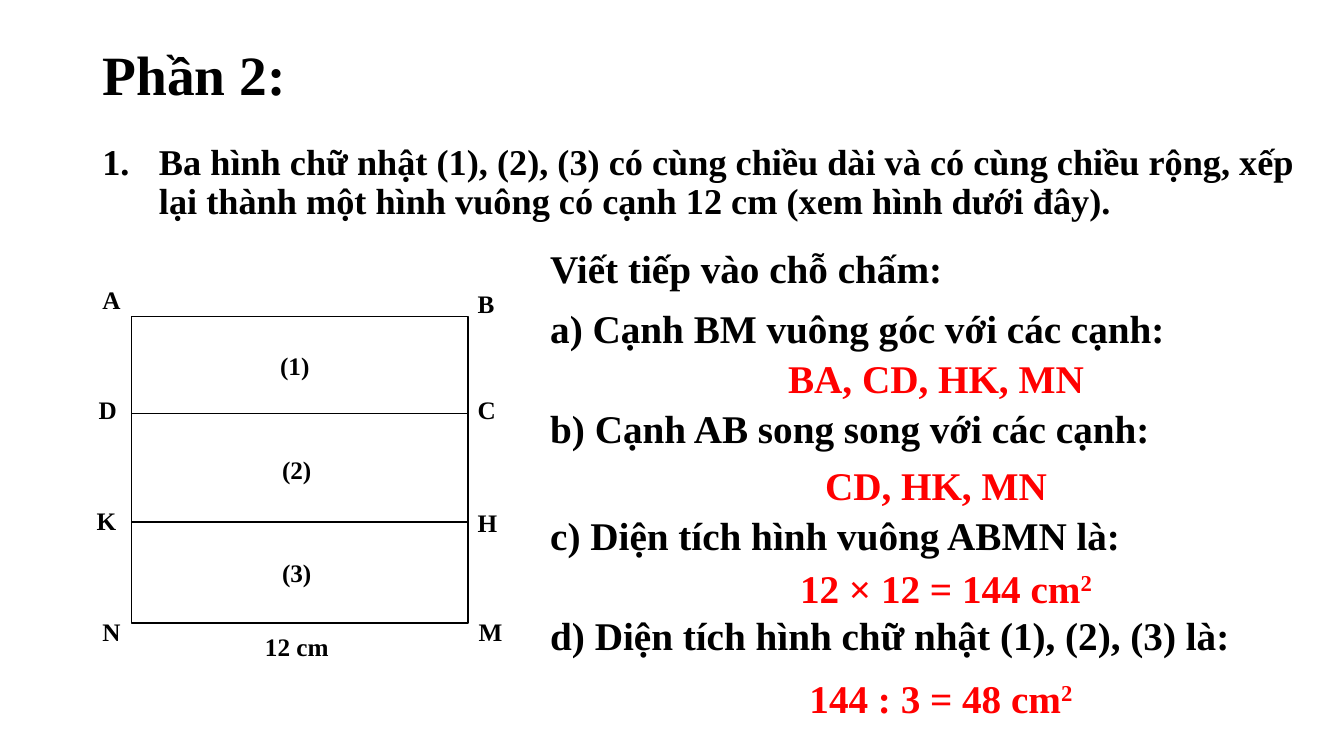
from lxml.etree import SubElement
from pptx import Presentation
from pptx.dml.color import RGBColor
from pptx.enum.shapes import MSO_CONNECTOR, MSO_SHAPE
from pptx.enum.text import MSO_ANCHOR, MSO_AUTO_SIZE, PP_ALIGN
from pptx.oxml.ns import qn
from pptx.util import Pt

BLACK, RED = "000000", "FF0000"


def color(code):
    return RGBColor.from_string(code)


def write(shape, box, text, size, tint=BLACK, align=PP_ALIGN.LEFT, **spacing):
    """Place a shape at box and fill it with one bold paragraph; ² becomes a raised 2."""
    shape.left, shape.top, shape.width, shape.height = map(Pt, box)
    frame = shape.text_frame
    frame.word_wrap = True
    frame.auto_size = MSO_AUTO_SIZE.NONE
    para = frame.paragraphs[0]
    para.alignment = align
    for name, value in spacing.items():
        setattr(para, name, value)
    base, mark, _ = text.partition("²")
    for part in [base, "2"] if mark else [base]:
        run = para.add_run()
        run.text = part
        look = {"name": "Times New Roman", "size": Pt(size), "bold": True}
        for name, value in look.items():
            setattr(run.font, name, value)
        run.font.color.rgb = color(tint)
    if mark:
        run._r.get_or_add_rPr().set("baseline", "30000")
    return para


deck = Presentation()
deck.slide_width, deck.slide_height = Pt(960), Pt(540)
slide = deck.slides.add_slide(deck.slide_layouts[5])
shapes = slide.shapes
dense = {"line_spacing": 0.9, "space_before": Pt(10)}

# Title and numbered task
title = shapes.title
write(title, (66, 28.8, 169.2, 53.3), "Phần 2:", 39.6, line_spacing=0.9)
title.text_frame.vertical_anchor = MSO_ANCHOR.MIDDLE

task = write(
    shapes.add_textbox(0, 0, 0, 0), (66, 99.4, 866.9, 86.4),
    "Ba hình chữ nhật (1), (2), (3) có cùng chiều dài và có cùng chiều rộng, "
    "xếp lại thành một hình vuông có cạnh 12 cm (xem hình dưới đây).",
    25.9, **dense)
props = task._p.get_or_add_pPr()
props.set("marL", str(Pt(40.5)))
props.set("indent", str(Pt(-40.5)))
SubElement(props, qn("a:buFont"), typeface="+mj-lt")
SubElement(props, qn("a:buAutoNum"), type="arabicPeriod")

# Square cut into three rectangles
square = shapes.add_shape(
    MSO_SHAPE.RECTANGLE, Pt(93.9), Pt(226.1), Pt(240.5), Pt(218.9))
square.shadow.inherit = False
square.fill.background()
square.line.color.rgb = color(BLACK)
square.line.width = Pt(1)

for y in (295.2, 373):
    cut = shapes.add_connector(
        MSO_CONNECTOR.STRAIGHT, Pt(94.3), Pt(y), Pt(334.6), Pt(y))
    cut.line.color.rgb = color(BLACK)
    cut.line.width = Pt(1)
    SubElement(cut._element.spPr, qn("a:effectLst"))

labels = [
    ("A", 66, 199.4, 20.9), ("B", 334.1, 202.3, 20.9),
    ("C", 334.1, 277.9, 20.9), ("D", 63.4, 277.9, 20.9),
    ("H", 334.1, 358.6, 20.9), ("K", 61.9, 357.1, 20.9),
    ("M", 334.8, 437, 20.9), ("N", 66, 437, 20.9),
    ("(1)", 193, 247, 48.2), ("(2)", 194.4, 321.1, 48.2),
    ("(3)", 194.4, 394.6, 48.2), ("12 cm", 182.2, 447.1, 93.6),
]
for text, x, y, width in labels:
    write(shapes.add_textbox(0, 0, 0, 0), (x, y, width, 28.8), text, 18)

# Questions on the left edge, answers centred in red
asks = [
    ("Viết tiếp vào chỗ chấm:", 175),
    ("a) Cạnh BM vuông góc với các cạnh:", 217.4),
    ("b) Cạnh AB song song với các cạnh:", 288.7),
    ("c) Diện tích hình vuông ABMN là:", 365.8),
    ("d) Diện tích hình chữ nhật (1), (2), (3) là:", 437),
]
for text, y in asks:
    write(shapes.add_textbox(0, 0, 0, 0), (385.9, y, 565.2, 38.9),
          text, 28, **dense)

replies = [
    ("BA, CD, HK, MN", 385.9, 253.4),
    ("CD, HK, MN", 385.9, 329.8),
    ("12 × 12 = 144 cm²", 393.1, 403.2),
    ("144 : 3 = 48 cm²", 389.5, 481.7),
]
for text, x, y in replies:
    write(shapes.add_textbox(0, 0, 0, 0), (x, y, 565.2, 38.9),
          text, 28, RED, PP_ALIGN.CENTER, **dense)

deck.save("out.pptx")
